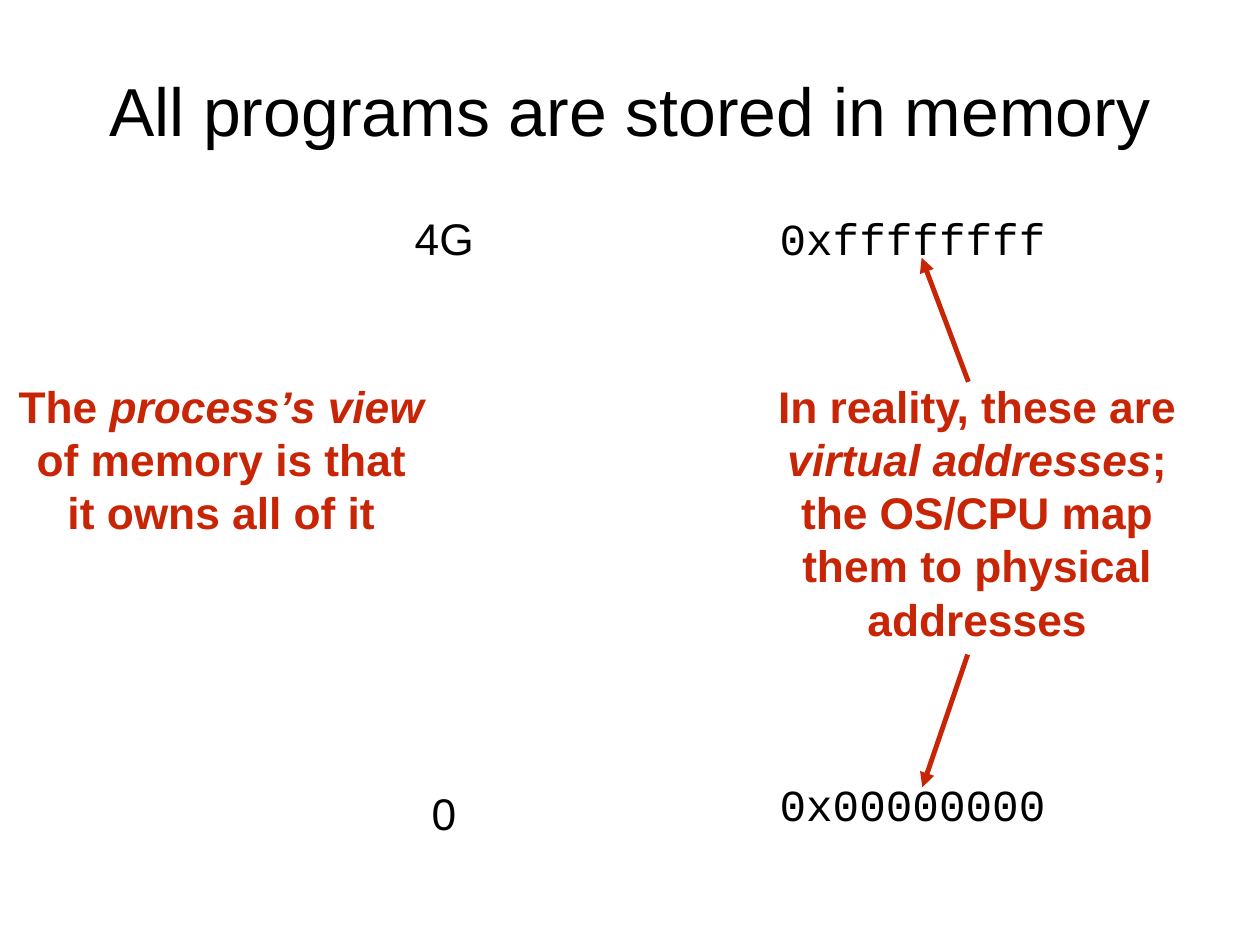
from dataclasses import dataclass

from lxml.etree import SubElement
from pptx import Presentation
from pptx.dml.color import RGBColor
from pptx.enum.shapes import MSO_CONNECTOR as Connector
from pptx.enum.text import MSO_ANCHOR as Anchor, PP_ALIGN as Align
from pptx.oxml.ns import qn
from pptx.util import Cm, Pt


@dataclass(frozen=True)
class Theme:
    ink: RGBColor = RGBColor(0x00, 0x00, 0x00)
    accent: RGBColor = RGBColor(0xC8, 0x25, 0x06)
    paper: RGBColor = RGBColor(0xFF, 0xFF, 0xFF)
    sans: str = "Arial"
    mono: str = "Courier New"
    title_size: float = 55.2
    body_size: float = 36
    note_pitch: float = 43.3
    arrow_width: float = 4


theme = Theme()

deck = Presentation()
deck.slide_width, deck.slide_height = Cm(36.12), Cm(27.1)
page = deck.slides.add_slide(deck.slide_layouts[6])
page.background.fill.solid()
page.background.fill.fore_color.rgb = theme.paper


def add_text(bounds, lines, font=theme.sans, size=theme.body_size,
             color=theme.ink, align=Align.CENTER, anchor=Anchor.MIDDLE,
             inset=0, bold=False, pitch=None):
    """Place lines of (wording, italic) spans in a text box."""
    box = page.shapes.add_textbox(*map(Cm, bounds))
    frame = box.text_frame
    frame.word_wrap = False
    frame.vertical_anchor = anchor
    frame.margin_left = frame.margin_right = Cm(inset)
    frame.margin_top = frame.margin_bottom = Cm(inset)
    for index, spans in enumerate(lines):
        para = frame.add_paragraph() if index else frame.paragraphs[0]
        para.alignment = align
        if pitch:
            para.line_spacing = Pt(pitch)
        for wording, italic in spans:
            span = para.add_run()
            span.text = wording
            span.font.name = font
            span.font.size = Pt(size)
            span.font.bold = bold
            span.font.italic = italic
            span.font.color.rgb = color


# Title
add_text((2.64, 1.21, 30.84, 3.84),
         [[("All programs are stored in memory", False)]],
         size=theme.title_size)

# Ends of the memory range: sizes, then addresses
for wording, left, top, width, font, align in (
    ("0", 12.22, 22.4, 1.02, theme.sans, Align.CENTER),
    ("4G", 11.73, 5.92, 2.01, theme.sans, Align.CENTER),
    ("0xffffffff", 22.17, 5.92, 7.95, theme.mono, Align.RIGHT),
    ("0x00000000", 22.17, 22.15, 7.95, theme.mono, Align.RIGHT),
):
    add_text((left, top, width, 1.8), [[(wording, False)]],
             font=font, align=align, inset=0.15)

# Notes on either side
process_view = [
    [("The ", False), ("process’s view", True)],
    [("of memory is that", False)],
    [("it owns all of it", False)],
]
virtual_addresses = [
    [("In reality, these are", False)],
    [("virtual addresses", True), (";", False)],
    [("the OS/CPU map", False)],
    [("them to physical", False)],
    [("addresses", False)],
]
for bounds, lines in (
    ((0.53, 10.86, 11.63, 4.58), process_view),
    ((21.96, 10.86, 12.1, 7.64), virtual_addresses),
):
    add_text(bounds, lines, color=theme.accent, anchor=Anchor.TOP,
             bold=True, pitch=theme.note_pitch)

# Arrows from the right-hand note to both addresses
for ends in ((27.76, 10.95, 26.42, 7.39), (27.74, 18.77, 26.44, 22.58)):
    arrow = page.shapes.add_connector(Connector.STRAIGHT, *map(Cm, ends))
    arrow.line.color.rgb = theme.accent
    arrow.line.width = Pt(theme.arrow_width)
    SubElement(arrow.line._get_or_add_ln(), qn("a:tailEnd"), type="triangle")
    SubElement(arrow._element.spPr, qn("a:effectLst"))

deck.save("out.pptx")
